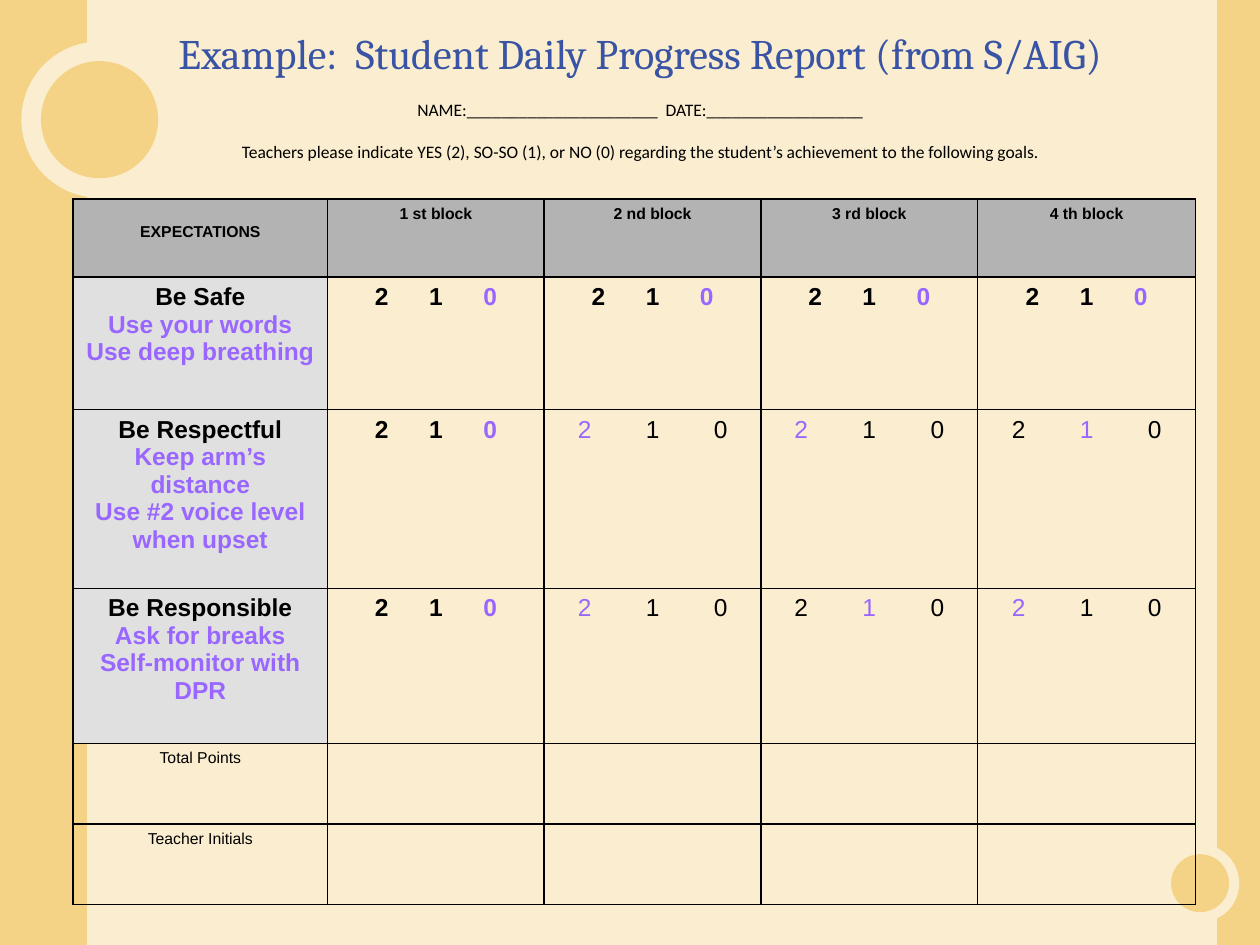
"""Build a one-slide student daily progress report with a scoring table."""
import dataclasses

import lxml.etree
import pptx
import pptx.dml.color
import pptx.enum.shapes
import pptx.enum.text
import pptx.oxml.ns
import pptx.util


@dataclasses.dataclass(frozen=True)
class Theme:
    cream: str = "FBEDCF"
    gold: str = "F4D387"
    blue: str = "3A54A5"
    black: str = "000000"
    purple: str = "9966FF"
    header_gray: str = "B3B3B3"
    goal_gray: str = "E0E0E0"
    title_size: int = 24
    note_size: int = 10
    label_size: int = 9
    goal_size: int = 14


theme = Theme()
color = pptx.dml.color.RGBColor.from_string
qn = pptx.oxml.ns.qn
Shapes = pptx.enum.shapes.MSO_SHAPE

presentation = pptx.Presentation()
presentation.slide_width = pptx.util.Inches(10)
presentation.slide_height = pptx.util.Inches(7.5)
unit = presentation.slide_width // 100
slide = presentation.slides.add_slide(presentation.slide_layouts[5])
slide.background.fill.solid()
slide.background.fill.fore_color.rgb = color(theme.cream)


def grid(*counts):
    return [round(count * unit) for count in counts]


def style(paragraph, size, name, ink, bold=False):
    paragraph.alignment = pptx.enum.text.PP_ALIGN.CENTER
    paragraph.font.size = pptx.util.Pt(size)
    paragraph.font.name = name
    paragraph.font.bold = bold
    paragraph.font.color.rgb = color(ink)


decorations = [
    (Shapes.RECTANGLE, 96.6, 0, 3.4, 75, theme.gold),
    (Shapes.RECTANGLE, 0, 0, 6.9, 75, theme.gold),
]
for center_x, center_y, outer, inner in [(7.9, 9.5, 6.2, 4.65), (95.25, 70.1, 3.1, 2.3)]:
    for radius, fill in [(outer, theme.cream), (inner, theme.gold)]:
        decorations.append((Shapes.OVAL, center_x - radius, center_y - radius,
                            2 * radius, 2 * radius, fill))
for kind, left, top, width, height, fill in decorations:
    shape = slide.shapes.add_shape(kind, *grid(left, top, width, height))
    shape.shadow.inherit = False
    shape.fill.solid()
    shape.fill.fore_color.rgb = color(fill)
    shape.line.fill.background()

title = slide.shapes.title
slide.shapes.element.append(title.element)
title.left, title.top, title.width, title.height = grid(8.3, 1.6, 85, 11.8)
title.text_frame.word_wrap = True
title.text_frame.auto_size = pptx.enum.text.MSO_AUTO_SIZE.NONE
title.text_frame.vertical_anchor = pptx.enum.text.MSO_ANCHOR.MIDDLE
title.text_frame.text = "\n".join([
    "Example:  Student Daily Progress Report (from S/AIG)",
    "NAME:______________________  DATE:__________________",
    "Teachers please indicate YES (2), SO-SO (1), or NO (0) regarding "
    "the student’s achievement to the following goals.",
])
heading, *notes = title.text_frame.paragraphs
style(heading, theme.title_size, "Cambria", theme.blue)
for note in notes:
    style(note, theme.note_size, "Calibri", theme.black)
    note.space_before = pptx.util.Pt(12)

column_widths = grid(20.2, 17.2, 17.2, 17.2, 17.3)
row_heights = grid(6.2, 10.5, 14.2, 12.3, 6.4, 6.4)
table = slide.shapes.add_table(
    len(row_heights), len(column_widths), *grid(5.8, 15.8),
    sum(column_widths), sum(row_heights)).table
table.first_row = table.horz_banding = False
for column, width in zip(table.columns, column_widths):
    column.width = width
for row, height in zip(table.rows, row_heights):
    row.height = height

for cell in table.iter_cells():
    properties = cell._tc.get_or_add_tcPr()
    for side in ("a:lnL", "a:lnR", "a:lnT", "a:lnB"):
        border = lxml.etree.SubElement(properties, qn(side), w=str(pptx.util.Pt(1)))
        border_fill = lxml.etree.SubElement(border, qn("a:solidFill"))
        lxml.etree.SubElement(border_fill, qn("a:srgbClr"), val=theme.black)
    cell.fill.background()

headers = ["EXPECTATIONS", "1 st block", "2 nd block", "3 rd block", "4 th block"]
labels = [(0, index, text, True) for index, text in enumerate(headers)]
labels += [(4, 0, "Total Points", False), (5, 0, "Teacher Initials", False)]
for row, column, text, bold in labels:
    cell = table.cell(row, column)
    cell.text = text
    style(cell.text_frame.paragraphs[0], theme.label_size, "Arial", theme.black, bold)
    if row == 0:
        cell.fill.solid()
        cell.fill.fore_color.rgb = color(theme.header_gray)
table.cell(0, 0).margin_top = grid(1.9)[0]

goals = [
    (["Be Safe", "Use your words", "Use deep breathing"],
     [(True, "0"), (True, "0"), (True, "0"), (True, "0")]),
    (["Be Respectful", "Keep arm’s distance", "Use #2 voice level when upset"],
     [(True, "0"), (False, "2"), (False, "2"), (False, "1")]),
    (["Be Responsible", "Ask for breaks", "Self-monitor with DPR"],
     [(True, "0"), (False, "2"), (False, "1"), (False, "2")]),
]
for row, (lines, scores) in enumerate(goals, start=1):
    cell = table.cell(row, 0)
    cell.text = "\n".join(lines)
    cell.fill.solid()
    cell.fill.fore_color.rgb = color(theme.goal_gray)
    for index, paragraph in enumerate(cell.text_frame.paragraphs):
        style(paragraph, theme.goal_size, "Arial",
              theme.purple if index else theme.black, True)
    for column, (bold, chosen) in enumerate(scores, start=1):
        cell = table.cell(row, column)
        paragraph = cell.text_frame.paragraphs[0]
        style(paragraph, theme.goal_size, "Arial", theme.black, bold)
        paragraph.alignment = pptx.enum.text.PP_ALIGN.LEFT
        tabs = lxml.etree.Element(qn("a:tabLst"))
        paragraph._p.get_or_add_pPr().insert(0, tabs)
        middle = column_widths[column] // 2 - cell.margin_left
        gap = grid(4.3 if bold else 5.4)[0]
        for step, digit in zip((-1, 0, 1), "210"):
            lxml.etree.SubElement(tabs, qn("a:tab"), pos=str(middle + step * gap), algn="ctr")
            run = paragraph.add_run()
            run.text = "\t" + digit
            if digit == chosen:
                run.font.color.rgb = color(theme.purple)

presentation.save("out.pptx")
